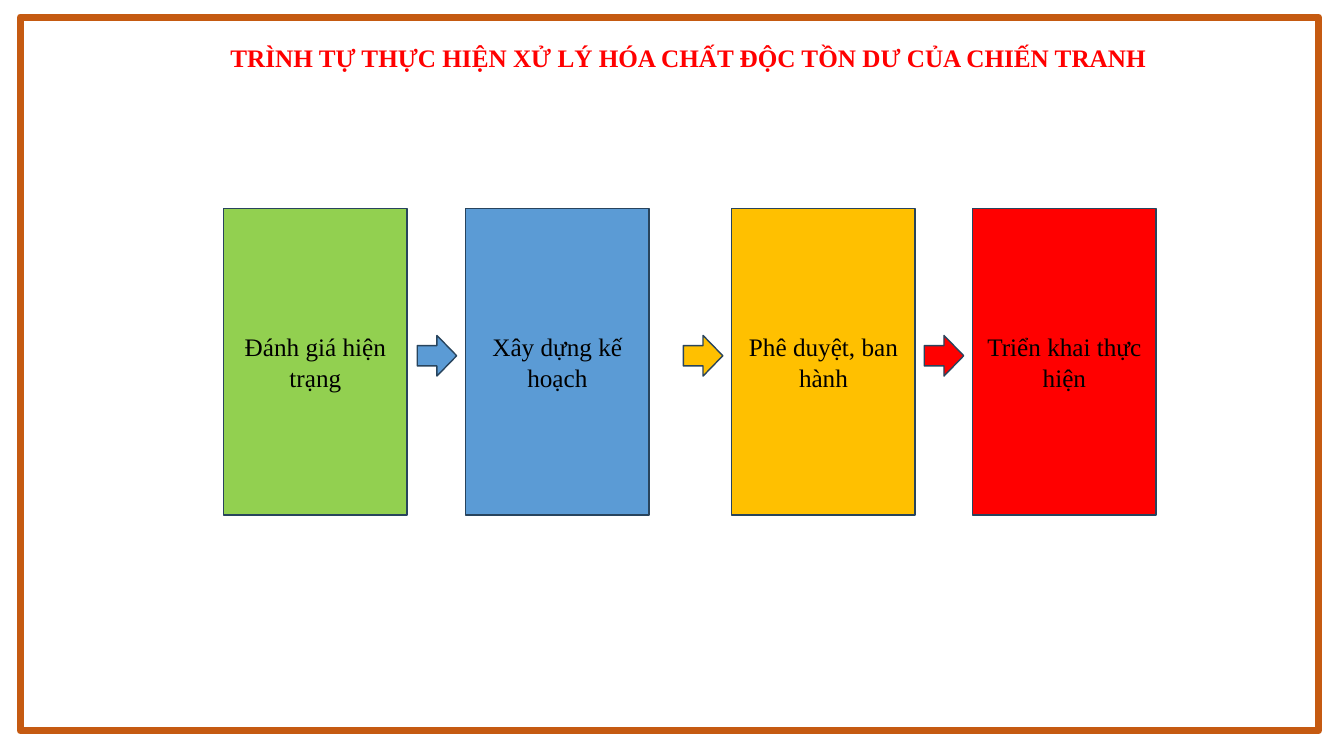
from dataclasses import dataclass

from pptx import Presentation
from pptx.dml.color import RGBColor
from pptx.enum.shapes import MSO_SHAPE
from pptx.enum.text import MSO_ANCHOR, PP_ALIGN
from pptx.util import Pt


@dataclass(frozen=True)
class Theme:
    font: str = "Times New Roman"
    size: float = 18
    ink: str = "000000"
    title: str = "FF0000"
    frame: str = "C55A11"
    edge: str = "28445D"
    green: str = "92D050"
    blue: str = "5B9BD5"
    gold: str = "FFC000"
    red: str = "FF0000"


THEME = Theme()
TITLE = "TRÌNH TỰ THỰC HIỆN XỬ LÝ HÓA CHẤT ĐỘC TỒN DƯ CỦA CHIẾN TRANH"
STEPS = [
    ("Đánh giá hiện trạng", 159.8, THEME.green),
    ("Xây dựng kế hoạch", 332.6, THEME.blue),
    ("Phê duyệt, ban hành", 522.7, THEME.gold),
    ("Triển khai thực hiện", 694.8, THEME.red),
]
STEP_TOP, STEP_WIDE, STEP_HIGH = 149, 131, 219
ARROW_TOP, ARROW_WIDE, ARROW_HIGH, ARROW_BACK = 239.6, 28.2, 29, 34.6


def set_text(shape, text, color, bold=False):
    frame = shape.text_frame
    frame.text = text
    frame.vertical_anchor = MSO_ANCHOR.MIDDLE
    para = frame.paragraphs[0]
    para.alignment = PP_ALIGN.CENTER
    font = para.runs[0].font
    font.name = THEME.font
    font.size = Pt(THEME.size)
    font.bold = bold
    font.color.rgb = RGBColor.from_string(color)


def add_block(slide, kind, box, fill=None, edge=THEME.edge, width=1):
    """Add a preset shape; without a fill it is only an outline."""
    shape = slide.shapes.add_shape(kind, *map(Pt, box))
    shape.shadow.inherit = False
    if fill:
        shape.fill.solid()
        shape.fill.fore_color.rgb = RGBColor.from_string(fill)
    else:
        shape.fill.background()
    shape.line.color.rgb = RGBColor.from_string(edge)
    shape.line.width = Pt(width)
    return shape


def add_step(slide, text, left, fill):
    box = (left, STEP_TOP, STEP_WIDE, STEP_HIGH)
    step = add_block(slide, MSO_SHAPE.RECTANGLE, box, fill)
    set_text(step, text, THEME.ink)


def add_arrow(slide, left, fill):
    """Add the arrow that leads into the step at left."""
    box = (left - ARROW_BACK, ARROW_TOP, ARROW_WIDE, ARROW_HIGH)
    add_block(slide, MSO_SHAPE.RIGHT_ARROW, box, fill)


def set_title(slide):
    title = slide.shapes.title
    title.left, title.top = Pt(154), Pt(26.6)
    title.width, title.height = Pt(675.4), Pt(29)
    set_text(title, TITLE, THEME.title, bold=True)
    title.text_frame.word_wrap = False
    title.text_frame.paragraphs[0].line_spacing = 1.0


def main():
    deck = Presentation()
    deck.slide_width, deck.slide_height = Pt(960), Pt(540)
    slide = deck.slides.add_slide(deck.slide_layouts[5])
    set_title(slide)
    frame = (14.4, 12.2, 927.4, 509.8)
    add_block(slide, MSO_SHAPE.RECTANGLE, frame, edge=THEME.frame, width=5)
    for text, left, fill in STEPS:
        add_step(slide, text, left, fill)
    for _, left, fill in STEPS[1:]:
        add_arrow(slide, left, fill)
    deck.save("out.pptx")


if __name__ == "__main__":
    main()
